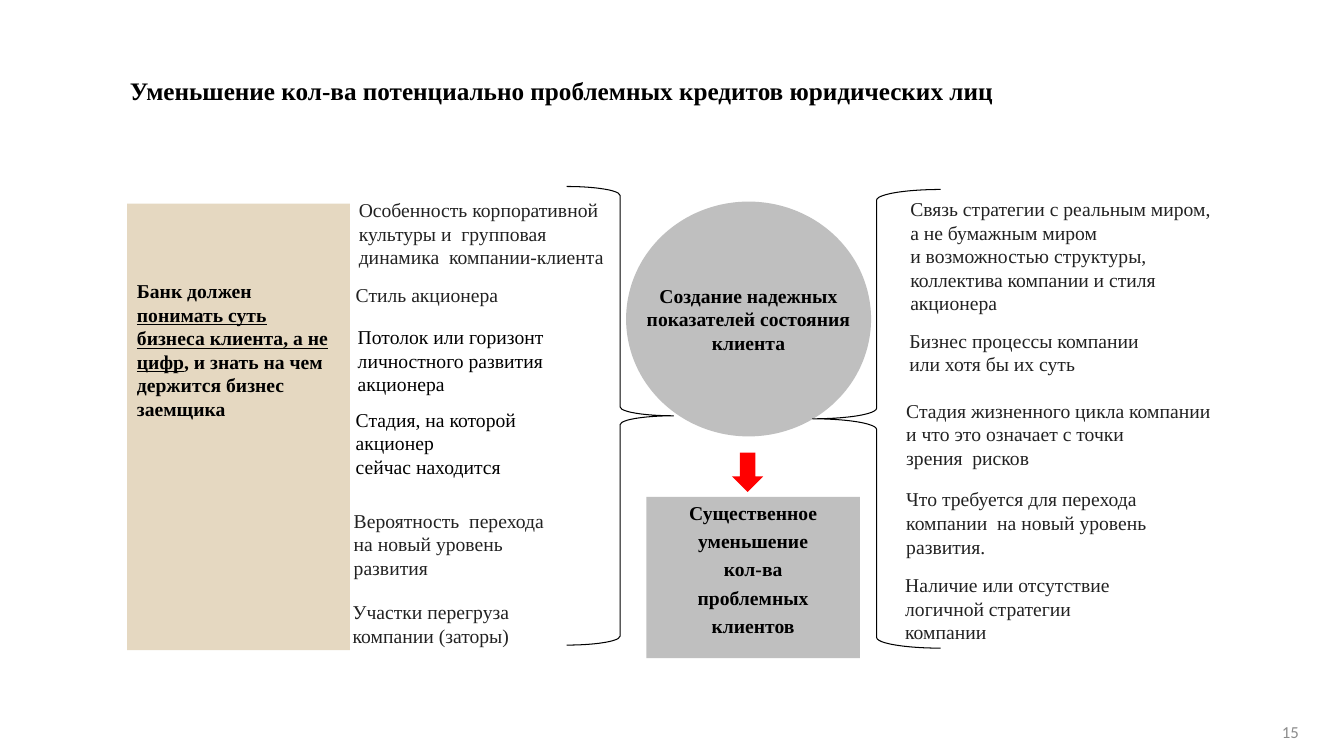
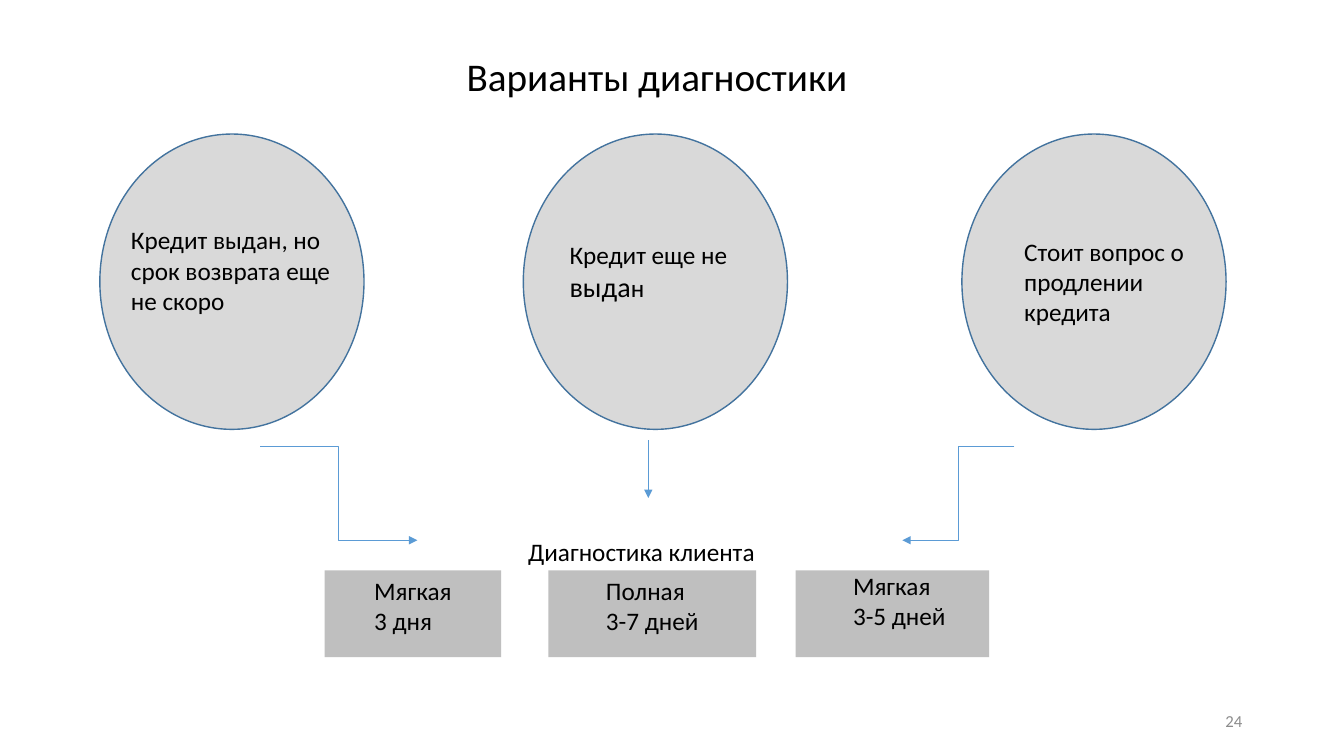
from lxml import etree
from pptx import Presentation
from pptx.dml.color import RGBColor
from pptx.enum.shapes import MSO_CONNECTOR as CONN, MSO_SHAPE as SHAPE
from pptx.enum.text import MSO_ANCHOR as ANCHOR, PP_ALIGN as ALIGN
from pptx.oxml.ns import qn
from pptx.util import Inches, Pt

BLACK = RGBColor(0x00, 0x00, 0x00)
INK = RGBColor(0x22, 0x22, 0x22)
MUTED = RGBColor(0x8C, 0x8C, 0x8C)
SAND = RGBColor(0xE5, 0xD8, 0xC1)
GREY = RGBColor(0xBF, 0xBF, 0xBF)
PALE = RGBColor(0xD9, 0xD9, 0xD9)
RED = RGBColor(0xFF, 0x00, 0x00)
OUTLINE = RGBColor(0x43, 0x73, 0x9E)
ARROW = RGBColor(0x5B, 0x9B, 0xD5)
SERIF, SANS = "Times New Roman", "Calibri"

UNDERLINE = {"underline": True}
BANK_DUTY = [
    "Банк должен",
    [("понимать суть", UNDERLINE)],
    [("бизнеса клиента, а не", UNDERLINE)],
    [("цифр", UNDERLINE), (", и знать на чем", {})],
    "держится бизнес",
    "заемщика",
]
GOAL = ["Создание надежных", "показателей состояния", "клиента"]
RESULT = ["Существенное", "уменьшение", "кол-ва", "проблемных", "клиентов"]
FACTORS = [
    (3.46, 1.91, 2.75, 0.81, INK, ["Особенность корпоративной", "культуры и  групповая",
                                   "динамика  компании-клиента"]),
    (3.43, 2.75, 2.13, 0.34, INK, ["Стиль акционера"]),
    (3.45, 3.17, 2.13, 0.81, BLACK, ["Потолок или горизонт", "личностного развития",
                                     "акционера"]),
    (3.43, 3.99, 2.13, 0.81, BLACK, ["Стадия, на которой акционер", "сейчас находится"]),
    (3.41, 4.99, 2.25, 0.81, INK, ["Вероятность  перехода", "на новый уровень", "развития"]),
    (3.40, 5.90, 2.13, 0.57, INK, ["Участки перегруза", "компании (заторы)"]),
    (8.93, 1.90, 3.40, 1.28, INK, ["Связь стратегии с реальным миром,", "а не бумажным миром",
                                   "и возможностью структуры,",
                                   "коллектива компании и стиля", "акционера"]),
    (8.92, 3.21, 3.40, 0.57, INK, ["Бизнес процессы компании", "или хотя бы их суть"]),
    (8.89, 3.90, 3.40, 0.81, INK, ["Стадия жизненного цикла компании",
                                   "и что это означает с точки", "зрения  рисков"]),
    (8.89, 4.78, 3.40, 0.81, INK, ["Что требуется для перехода", "компании  на новый уровень",
                                   "развития."]),
    (8.88, 5.63, 3.40, 0.81, INK, ["Наличие или отсутствие", "логичной стратегии", "компании"]),
]
BRACES = [(SHAPE.RIGHT_BRACE, 5.62, 1.85, 1.06), (SHAPE.LEFT_BRACE, 8.06, 1.88, 1.27)]

CASES = [
    (0.99, 1.20, 2.18, ["Кредит выдан, но срок возврата еще не скоро"]),
    (5.19, 5.55, 2.32, [[("Кредит еще не ", {}), ("выда", {"size": Pt(20)}), ("н", {})]]),
    (9.54, 10.06, 2.29, ["Стоит вопрос о продлении кредита"]),
]
OPTIONS = [
    (3.22, 1.75, 0.49, 0.05, ["Мягкая", "3 дня"]),
    (5.44, 2.06, 0.57, 0.05, ["Полная", "3-7 дней"]),
    (7.89, 1.92, 0.57, 0, ["Мягкая", "3-5 дней"]),
]
ARROWS = [
    (CONN.ELBOW, 2.58, 4.43, 4.14, 5.36),
    (CONN.STRAIGHT, 6.43, 4.37, 6.43, 4.94),
    (CONN.ELBOW, 10.06, 4.43, 8.95, 5.36),
]


def write(tf, paragraphs, size, font=SERIF, color=BLACK, bold=False,
          align=ALIGN.LEFT, anchor=ANCHOR.TOP, before=0):
    tf.word_wrap = True
    tf.vertical_anchor = anchor
    for i, runs in enumerate(paragraphs):
        p = tf.paragraphs[0] if i == 0 else tf.add_paragraph()
        p.alignment = align
        p.space_before = Pt(before)
        p.font.name, p.font.size, p.font.bold = font, Pt(size), bold
        p.font.color.rgb = color
        for text, style in [(runs, {})] if isinstance(runs, str) else runs:
            r = p.add_run()
            r.text = text
            for name, value in style.items():
                setattr(r.font, name, value)


def add_text(s, box, paragraphs, size, **style):
    sp = s.shapes.add_textbox(*map(Inches, box))
    write(sp.text_frame, paragraphs, size, **style)


def add_shape(s, kind, box, fill=None, line=None, width=1):
    sp = s.shapes.add_shape(kind, *map(Inches, box))
    sp.shadow.inherit = False
    if fill is None:
        sp.fill.background()
    else:
        sp.fill.solid()
        sp.fill.fore_color.rgb = fill
    if line is None:
        sp.line.fill.background()
    else:
        sp.line.color.rgb = line
        sp.line.width = Pt(width)
    return sp


def add_arrow(s, kind, *ends):
    c = s.shapes.add_connector(kind, *map(Inches, ends))
    c.line.color.rgb = ARROW
    c.line.width = Pt(0.5)
    etree.SubElement(c.line._get_or_add_ln(), qn("a:tailEnd"), type="triangle")
    etree.SubElement(c._element.spPr, qn("a:effectLst"))


def add_number(s, number, left, top):
    add_text(s, (left, top, 3, 0.4), [number], 12, font=SANS, color=MUTED,
             align=ALIGN.RIGHT, anchor=ANCHOR.MIDDLE)


def build_credit_slide(s):
    add_text(s, (1.19, 0.7, 10.42, 0.4),
             ["Уменьшение кол-ва потенциально проблемных кредитов юридических лиц"],
             18, bold=True, anchor=ANCHOR.BOTTOM)
    duty = add_shape(s, SHAPE.RECTANGLE, (1.26, 2.02, 2.21, 4.43), SAND)
    duty.text_frame.margin_top = Inches(0.75)
    duty.text_frame.margin_right = 0
    write(duty.text_frame, BANK_DUTY, 14, bold=True)

    goal = add_shape(s, SHAPE.OVAL, (6.21, 2, 2.43, 2.33), GREY)
    goal.text_frame.margin_left = goal.text_frame.margin_right = Inches(-0.3)
    write(goal.text_frame, GOAL, 14, bold=True, align=ALIGN.CENTER, anchor=ANCHOR.MIDDLE)

    result = add_shape(s, SHAPE.RECTANGLE, (6.41, 4.93, 2.12, 1.6), GREY)
    result.text_frame.margin_bottom = Inches(0.22)
    write(result.text_frame, RESULT, 14, bold=True, align=ALIGN.CENTER,
          anchor=ANCHOR.MIDDLE, before=3.4)
    add_shape(s, SHAPE.DOWN_ARROW, (7.26, 4.49, 0.31, 0.39), RED)

    for left, top, width, height, color, lines in FACTORS:
        add_text(s, (left, top, width, height), lines, 14, color=color, anchor=ANCHOR.MIDDLE)
    for kind, left, top, width in BRACES:
        add_shape(s, kind, (left, top, width, 4.55), line=BLACK, width=0.75)
    add_number(s, "15", 9.98, 7.06)


def build_diagnostics_slide(s):
    add_text(s, (4.53, 0.47, 8.64, 0.57), ["Варианты диагностики"], 28, font=SANS)
    for left, text_left, text_top, lines in CASES:
        add_shape(s, SHAPE.OVAL, (left, 1.33, 2.62, 2.93), PALE, OUTLINE)
        add_text(s, (text_left, text_top, 2.25, 1.01), lines, 18, font=SANS)
    for arrow in ARROWS:
        add_arrow(s, *arrow)
    for left, width, inset, top_inset, lines in OPTIONS:
        sp = add_shape(s, SHAPE.RECTANGLE, (left, 5.66, width, 0.86), GREY)
        sp.text_frame.margin_left = Inches(inset)
        sp.text_frame.margin_top = Inches(top_inset)
        write(sp.text_frame, lines, 18, font=SANS)
    add_text(s, (5.14, 5.27, 3.03, 0.4), ["Диагностика клиента"], 18, font=SANS)
    add_number(s, "24", 9.42, 6.95)


def main():
    prs = Presentation()
    prs.slide_width, prs.slide_height = Inches(13.33), Inches(7.5)
    for build in (build_credit_slide, build_diagnostics_slide):
        build(prs.slides.add_slide(prs.slide_layouts[6]))
    prs.save("out.pptx")


if __name__ == "__main__":
    main()
